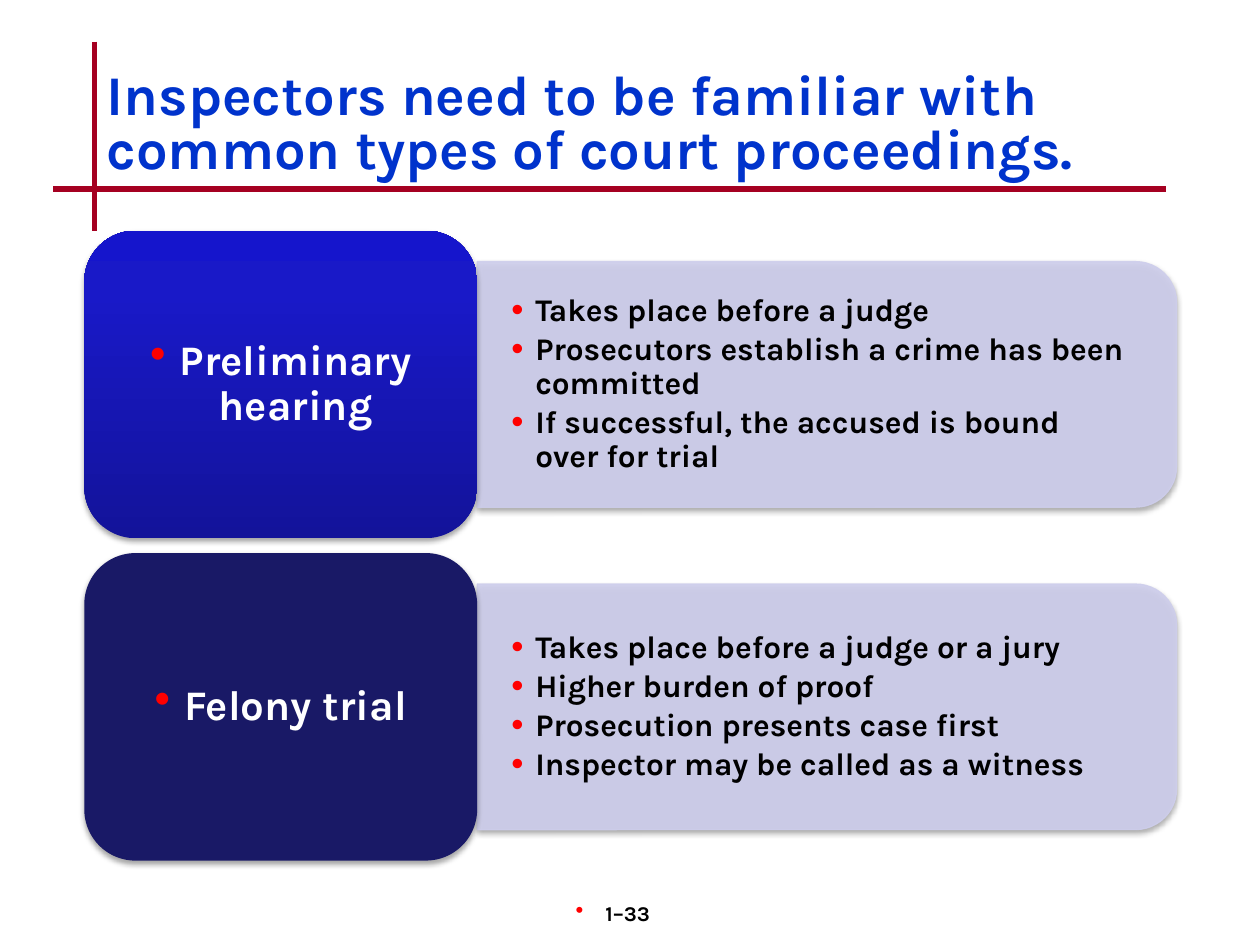
from lxml import etree
from pptx import Presentation
from pptx.dml.color import RGBColor
from pptx.enum.shapes import MSO_CONNECTOR, MSO_SHAPE
from pptx.enum.text import MSO_ANCHOR, MSO_AUTO_SIZE, PP_ALIGN
from pptx.oxml.ns import qn
from pptx.util import Cm, Pt

STRAIGHT = MSO_CONNECTOR.STRAIGHT
CARD_SHAPE, PANEL_SHAPE = MSO_SHAPE.ROUNDED_RECTANGLE, MSO_SHAPE.ROUND_2_SAME_RECTANGLE
MIDDLE, NO_AUTOFIT = MSO_ANCHOR.MIDDLE, MSO_AUTO_SIZE.NONE
LEFT, CENTER = PP_ALIGN.LEFT, PP_ALIGN.CENTER

TITLE = "Inspectors need to be familiar with common types of court proceedings."
PAGE_NUMBER = "1–33"
PROCEEDINGS = [
    ("Preliminary hearing", [
        "Takes place before a judge",
        "Prosecutors establish a crime has been committed",
        "If successful, the accused is bound over for trial",
    ]),
    ("Felony trial", [
        "Takes place before a judge or a jury",
        "Higher burden of proof",
        "Prosecution presents case first",
        "Inspector may be called as a witness",
    ]),
]
RULES = [(1.9, 0.84, 1.9, 4.65), (1.07, 3.81, 23.5, 3.81)]

THEME = {
    "font": "Karla",
    "title": "0033CC", "rule": "A50021", "bullet": "FF0000",
    "text": "000000", "card_text": "FFFFFF", "panel": "CECEEC",
    "cards": [[(0, "13139A"), (80, "1919C8"), (100, "1515CC")], [(0, "191966")]],
    "title_size": 32, "card_size": 24, "list_size": 18, "page_size": 12,
}

# Layout in centimetres
CARD_LEFT, CARD_TOP, CARD_WIDTH, CARD_HEIGHT, CARD_PITCH = 1.7, 4.65, 7.92, 6.2, 6.5
PANEL_WIDTH, PANEL_HEIGHT = 14.1, 4.95
LIST_WIDTH, LIST_HEIGHT = 13.84, 4.47
PANEL_LEFT = CARD_LEFT + CARD_WIDTH


def add_element(parent, tag, **attributes):
    return etree.SubElement(parent, qn(tag), {k: str(v) for k, v in attributes.items()})


def place(shape, left, top, width, height):
    shape.left, shape.top, shape.width, shape.height = map(Cm, (left, top, width, height))


def set_frame(frame, horizontal=0.25, vertical=0.13):
    frame.word_wrap = True
    frame.auto_size = NO_AUTOFIT
    frame.vertical_anchor = MIDDLE
    frame.margin_left = frame.margin_right = Cm(horizontal)
    frame.margin_top = frame.margin_bottom = Cm(vertical)


def write(paragraph, text, size, color, align, line_spacing=0.9):
    paragraph.alignment = align
    paragraph.line_spacing = line_spacing
    paragraph.space_before = Pt(0)
    run = paragraph.add_run()
    run.text = text
    run.font.name = THEME["font"]
    run.font.size = Pt(size)
    run.font.bold = True
    run.font.color.rgb = RGBColor.from_string(color)


def add_bullet(paragraph, indent):
    properties = paragraph._p.get_or_add_pPr()
    properties.set("marL", str(Cm(indent)))
    properties.set("indent", str(-Cm(indent)))
    add_element(add_element(properties, "a:buClr"), "a:srgbClr", val=THEME["bullet"])
    add_element(properties, "a:buSzPct", val=110000)
    add_element(properties, "a:buChar", char="•")


def add_shadow(shape):
    shape.shadow.inherit = False
    effects = shape._element.spPr.find(qn("a:effectLst"))
    shadow = add_element(effects, "a:outerShdw", blurRad=Pt(3.1), dist=Pt(1.8),
                         dir=5400000, rotWithShape=0)
    add_element(add_element(shadow, "a:srgbClr", val="000000"), "a:alpha", val=35000)


def fill_card(card, stops):
    if len(stops) == 1:
        card.fill.solid()
        card.fill.fore_color.rgb = RGBColor.from_string(stops[0][1])
        return
    card.fill.gradient()
    card.fill.gradient_angle = 90
    stop_list = card._element.spPr.find(".//" + qn("a:gsLst"))
    for stop in list(stop_list):
        stop_list.remove(stop)
    for position, color in stops:
        stop = add_element(stop_list, "a:gs", pos=position * 1000)
        add_element(stop, "a:srgbClr", val=color)


def add_panel(slide, middle):
    """Turn a shape with two rounded top corners so they face right."""
    panel = slide.shapes.add_shape(PANEL_SHAPE, 0, 0, 0, 0)
    place(panel, PANEL_LEFT + (PANEL_WIDTH - PANEL_HEIGHT) / 2, middle - PANEL_WIDTH / 2,
          PANEL_HEIGHT, PANEL_WIDTH)
    panel.rotation = 90
    panel.fill.solid()
    panel.line.width = Pt(0.75)
    for color in (panel.fill.fore_color, panel.line.color):
        color.rgb = RGBColor.from_string(THEME["panel"])
    for color in panel._element.spPr.iter(qn("a:srgbClr")):
        add_element(color, "a:alpha", val=90000)
    add_shadow(panel)


def add_list(slide, placeholder, items, middle):
    place(placeholder, PANEL_LEFT, middle - LIST_HEIGHT / 2, LIST_WIDTH, LIST_HEIGHT)
    slide.shapes._spTree.append(placeholder._element)  # in front of its panel
    frame = placeholder.text_frame
    set_frame(frame, 0.69, 0.36)
    for number, item in enumerate(items):
        paragraph = frame.add_paragraph() if number else frame.paragraphs[0]
        paragraph.level = 1
        add_bullet(paragraph, 0.48)
        write(paragraph, item, THEME["list_size"], THEME["text"], LEFT)
        paragraph.space_after = Pt(2.7)


def add_card(slide, name, stops, top):
    card = slide.shapes.add_shape(CARD_SHAPE, 0, 0, 0, 0)
    place(card, CARD_LEFT, top, CARD_WIDTH, CARD_HEIGHT)
    fill_card(card, stops)
    card.line.fill.background()
    add_shadow(card)
    set_frame(card.text_frame)
    paragraph = card.text_frame.paragraphs[0]
    add_bullet(paragraph, 0.6)
    write(paragraph, name, THEME["card_size"], THEME["card_text"], CENTER)


def add_rule(slide, ends):
    rule = slide.shapes.add_connector(STRAIGHT, *map(Cm, ends))
    rule.line.width = Pt(3)
    rule.line.color.rgb = RGBColor.from_string(THEME["rule"])
    add_element(rule._element.spPr, "a:effectLst")


def add_page_number(slide):
    page = slide.shapes.add_textbox(Cm(9.96), Cm(17.78), Cm(5.28), Cm(1.27))
    set_frame(page.text_frame)
    page.text_frame.margin_right = Cm(0.74)
    paragraph = page.text_frame.paragraphs[0]
    add_bullet(paragraph, 0.6)
    write(paragraph, PAGE_NUMBER, THEME["page_size"], THEME["text"], CENTER, 1)


def main():
    deck = Presentation()
    deck.slide_width, deck.slide_height = Cm(25.4), Cm(19.05)
    slide = deck.slides.add_slide(deck.slide_layouts[3])
    title, *lists = slide.placeholders

    for ends in RULES:
        add_rule(slide, ends)
    add_page_number(slide)

    place(title, 1.9, 1.27, 21.6, 2.54)
    set_frame(title.text_frame)
    write(title.text_frame.paragraphs[0], TITLE, THEME["title_size"], THEME["title"], LEFT, 0.8)

    for row, (name, items) in enumerate(PROCEEDINGS):
        top = CARD_TOP + row * CARD_PITCH
        middle = top + CARD_HEIGHT / 2
        add_panel(slide, middle)
        add_list(slide, lists[row], items, middle)
        add_card(slide, name, THEME["cards"][row], top)

    deck.save("out.pptx")


if __name__ == "__main__":
    main()
